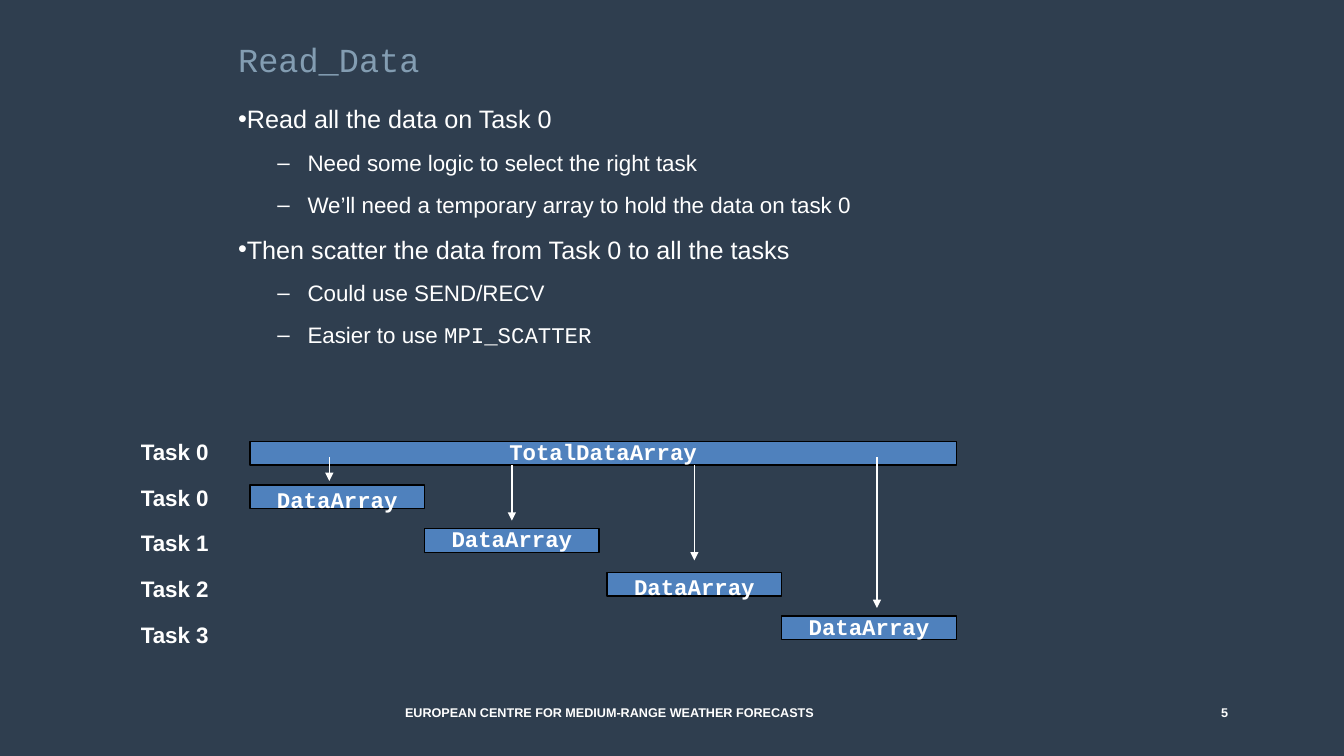
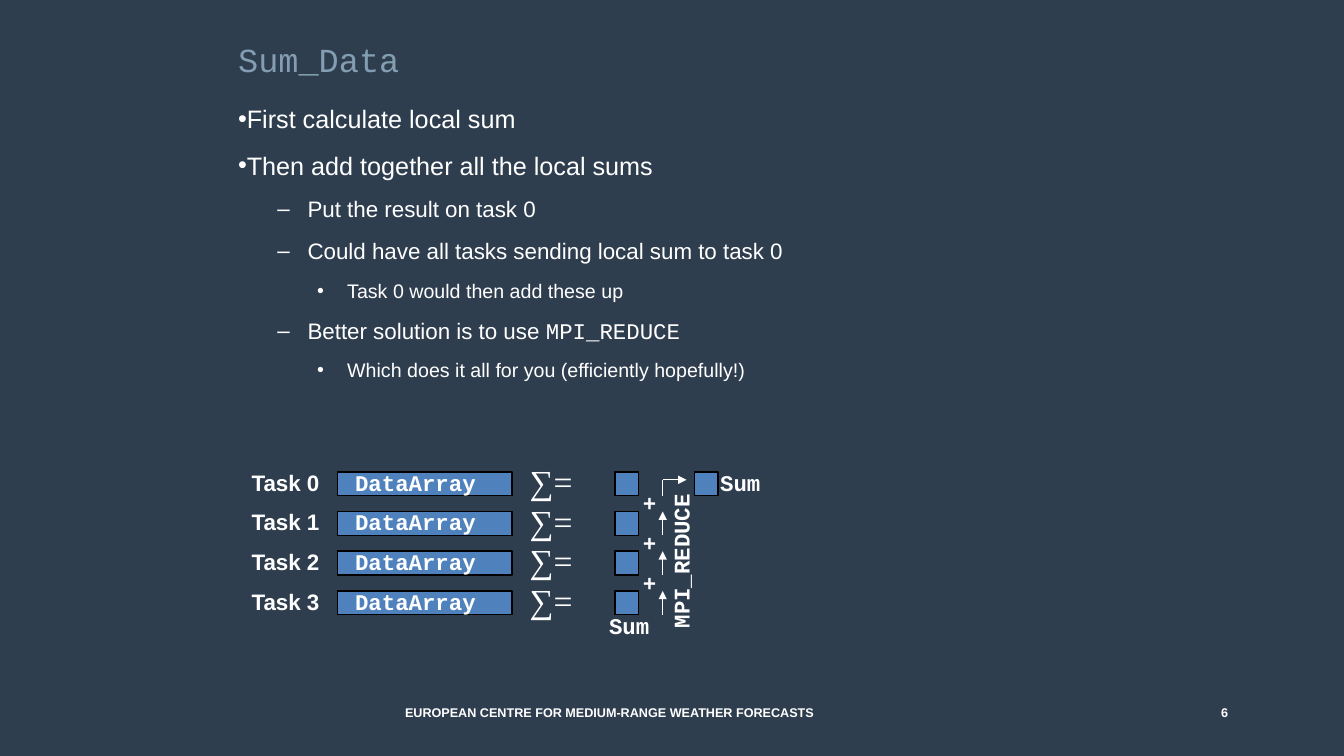
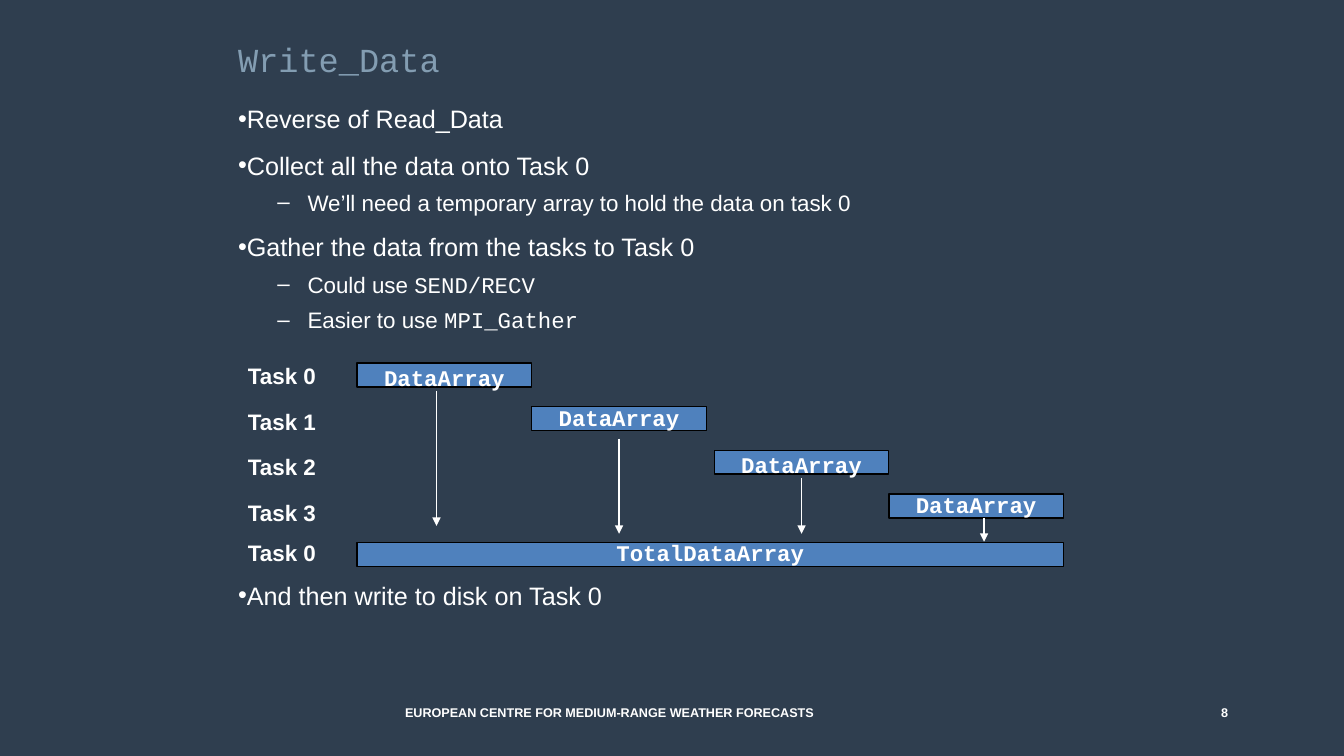
from lxml.etree import SubElement
from pptx import Presentation
from pptx.dml.color import RGBColor
from pptx.enum.shapes import MSO_CONNECTOR, MSO_SHAPE
from pptx.enum.text import MSO_ANCHOR, MSO_AUTO_SIZE, PP_ALIGN
from pptx.oxml.ns import qn
from pptx.util import Cm, Pt

COLORS = {"back": "2F3E4F", "title": "839DB2", "text": "FFFFFF",
          "bar": "4F81BD", "edge": "000000"}
SANS, MONO, SERIF = "Arial", "Courier New", "Times New Roman"
BAR, THIN, LINE = 4.4, 0.6, 0.94  # bar width, bar height, label height

# Per list level: bullet, left margin, indent (cm), size, leading, space before (pt)
LEVELS = [("•", 0, -0.5, 18, 22, 11),
          ("–", 1.75, -0.76, 16, 20, 10),
          ("•", 2.75, -0.76, 14, 18, 9)]


def color(name):
    return RGBColor.from_string(COLORS[name])


def write(para, text, size=16, font=SANS, ink="text", bold=False, align=PP_ALIGN.LEFT):
    """Fill a paragraph; parts between backticks are set in the code font."""
    para.alignment = align
    for i, part in enumerate(text.split("`")):
        if part:
            run = para.add_run()
            run.text = part
            run.font.size = Pt(size)
            run.font.name = MONO if i % 2 else font
            run.font.bold = bold
            run.font.color.rgb = color(ink)


def place(shape, left, top, width, height):
    shape.left, shape.top = Cm(left), Cm(top)
    shape.width, shape.height = Cm(width), Cm(height)


def flush(frame, anchor):
    frame.margin_left = frame.margin_right = 0
    frame.margin_top = frame.margin_bottom = 0
    frame.vertical_anchor = anchor
    frame.auto_size = MSO_AUTO_SIZE.NONE
    frame.word_wrap = True


def label(shapes, text, left, top, width, height=LINE, **style):
    box = shapes.add_textbox(Cm(left), Cm(top), Cm(width), Cm(height))
    box.text_frame.word_wrap = True
    write(box.text_frame.paragraphs[0], text, **style)
    return box


def block(shapes, left, top, width):
    rect = shapes.add_shape(MSO_SHAPE.RECTANGLE, Cm(left), Cm(top), Cm(width), Cm(THIN))
    rect.shadow.inherit = False
    rect.fill.solid()
    rect.fill.fore_color.rgb = color("bar")
    rect.line.color.rgb = color("edge")
    rect.line.width = Pt(1)


def arrow(shapes, x1, y1, x2, y2, head=True):
    line = shapes.add_connector(MSO_CONNECTOR.STRAIGHT, Cm(x1), Cm(y1), Cm(x2), Cm(y2))
    line.line.color.rgb = color("text")
    line.line.width = Pt(1)
    if head:
        SubElement(line.line._get_or_add_ln(), qn("a:tailEnd"), type="triangle")
    SubElement(line._element.spPr, qn("a:effectLst"))


def bullet(para, level):
    mark, margin, indent = LEVELS[level][:3]
    props = para._p.get_or_add_pPr()
    props.set("marL", str(Cm(margin)))
    props.set("indent", str(Cm(indent)))
    tint = SubElement(props, qn("a:buClr"))
    SubElement(tint, qn("a:srgbClr"), val=COLORS["text"])
    SubElement(props, qn("a:buFont"), typeface=SANS)
    SubElement(props, qn("a:buChar"), char=mark)


def fill_list(frame, items, lead=None):
    """Items are (level, text) or (level, text, space before)."""
    for i, (level, text, *gap) in enumerate(items):
        para = frame.paragraphs[0] if i == 0 else frame.add_paragraph()
        size, pitch, before = LEVELS[level][3:]
        para.level = level
        bullet(para, level)
        para.line_spacing = lead if lead and level else Pt(pitch)
        para.space_before = Pt(0 if i == 0 else gap[0] if gap else before)
        write(para, text, size=size)


def footer(shapes, number):
    for text, left, width in (("EUROPEAN CENTRE FOR MEDIUM-RANGE WEATHER FORECASTS", 9.73, 11.25),
                              (number, 27.86, 6)):
        box = label(shapes, text, left, 17.53, width, 0.62,
                    size=9, bold=True, align=PP_ALIGN.CENTER)
        flush(box.text_frame, MSO_ANCHOR.BOTTOM)


def setup():
    deck = Presentation()
    deck.slide_width, deck.slide_height = Cm(33.87), Cm(19.05)
    fill = deck.slide_master.background.fill
    fill.solid()
    fill.fore_color.rgb = color("back")
    title, body = list(deck.slide_layouts[1].placeholders)[:2]
    place(title, 6, 1, 21.87, 1.02)
    place(body, 6, 2.6, 21.87, 13.85)
    return deck


def page(deck, number, title, items, lead=None):
    slide = deck.slides.add_slide(deck.slide_layouts[1])
    head, body = slide.shapes.title.text_frame, slide.placeholders[1].text_frame
    for frame in (head, body):
        flush(frame, MSO_ANCHOR.TOP)
    head.paragraphs[0].line_spacing = Pt(28)
    write(head.paragraphs[0], title, size=24, font=MONO, ink="title")
    fill_list(body, items, lead)
    footer(slide.shapes, number)
    return slide


def spread(shapes, left, top, total, arrows):
    """One full array and its four parts; total and arrows are relative to top."""
    code = dict(font=MONO, bold=True, align=PP_ALIGN.CENTER)
    base = left + 3
    # Full array
    block(shapes, base, top + total, 17.8)
    label(shapes, "Task 0", left, top + total - 0.2, 2.7, bold=True)
    label(shapes, "TotalDataArray", base, top + total - 0.2, 17.8, **code)
    # Parts, one for each task
    for i, (start, end) in enumerate(arrows):
        x = base + i * BAR + (0.2 if i > 1 else 0)
        y = top + i * 1.1
        block(shapes, x, y, BAR)
        label(shapes, f"Task {i}", left, top - 0.15 + i * 1.15, 2.7, bold=True)
        label(shapes, "DataArray", x, y - (0.2 if i % 2 else 0.1), BAR, **code)
        mid = base + 2 + i * 4.6
        arrow(shapes, mid, top + start, mid, top + end)


def reduce_rows(shapes, left, top):
    """Local sums of four tasks, added upwards into one sum."""
    code = dict(font=MONO, bold=True)
    lane = left + 12
    for i in range(4):
        y = top + i
        # Task row
        row = shapes.add_group_shape().shapes
        block(row, left + 3.8, y, BAR)
        label(row, "DataArray", left + 4, y - 0.2, 3.8, **code)
        label(row, f"Task {i}", left, y - 0.2, 3.6, bold=True, align=PP_ALIGN.RIGHT)
        block(row, left + 10.8, y, THIN)
        label(row, "∑=", left + 8.4, y - 0.4, 2, 1.27, size=24, font=SERIF)
        # Step to the row above
        if i:
            arrow(shapes, lane, y + THIN, lane, y)
            label(shapes, "+", left + 11.25, y - 0.68, 0.8, **code)
    # Final sum
    arrow(shapes, lane, top + 0.6, lane, top + 0.2, head=False)
    arrow(shapes, lane, top + 0.2, lane + 0.6, top + 0.2)
    block(shapes, left + 12.8, top, THIN)
    label(shapes, "Sum", left + 13.2, top - 0.2, 1.8, **code)
    label(shapes, "Sum", left + 10.4, top + 3.4, 1.8, **code)
    label(shapes, "MPI_REDUCE", left + 10.46, top + 1.72, 4, **code).rotation = 270


def main():
    deck = setup()

    read = page(deck, "5", "Read_Data", [
        (0, "Read all the data on Task 0"),
        (1, "Need some logic to select the right task"),
        (1, "We’ll need a temporary array to hold the data on task 0"),
        (0, "Then scatter the data from Task 0 to all the tasks"),
        (1, "Could use SEND/RECV"),
        (1, "Easier to use `MPI_SCATTER`")])
    spread(read.shapes, 3.3, 12.22, -1.1,
           [(-0.7, -0.1), (-0.5, 0.9), (-0.5, 1.9), (-0.7, 3.1)])

    total = page(deck, "6", "Sum_Data", [
        (0, "First calculate local sum"),
        (0, "Then add together all the local sums"),
        (1, "Put the result on task 0"),
        (1, "Could have all tasks sending local sum to task 0"),
        (2, "Task 0 would then add these up"),
        (1, "Better solution is to use `MPI_REDUCE`"),
        (2, "Which does it all for you (efficiently hopefully!)")])
    place(total.placeholders[1], 6, 2.6, 21.87, 7.82)
    reduce_rows(total.shapes, 4.7, 11.89)

    save = page(deck, "8", "Write_Data", [
        (0, "Reverse of Read_Data"),
        (0, "Collect all the data onto Task 0"),
        (1, "We’ll need a temporary array to hold the data on task 0"),
        (0, "Gather the data from the tasks to Task 0"),
        (1, "Could use `SEND/RECV`"),
        (1, "Easier to use `MPI_Gather`"),
        (0, "And then write to disk on Task 0", 176)], lead=0.8)
    spread(save.shapes, 6, 9.15, 4.52,
           [(0.7, 4.1), (1.9, 4.3), (2.9, 4.3), (3.9, 4.5)])

    deck.save("out.pptx")


if __name__ == "__main__":
    main()
